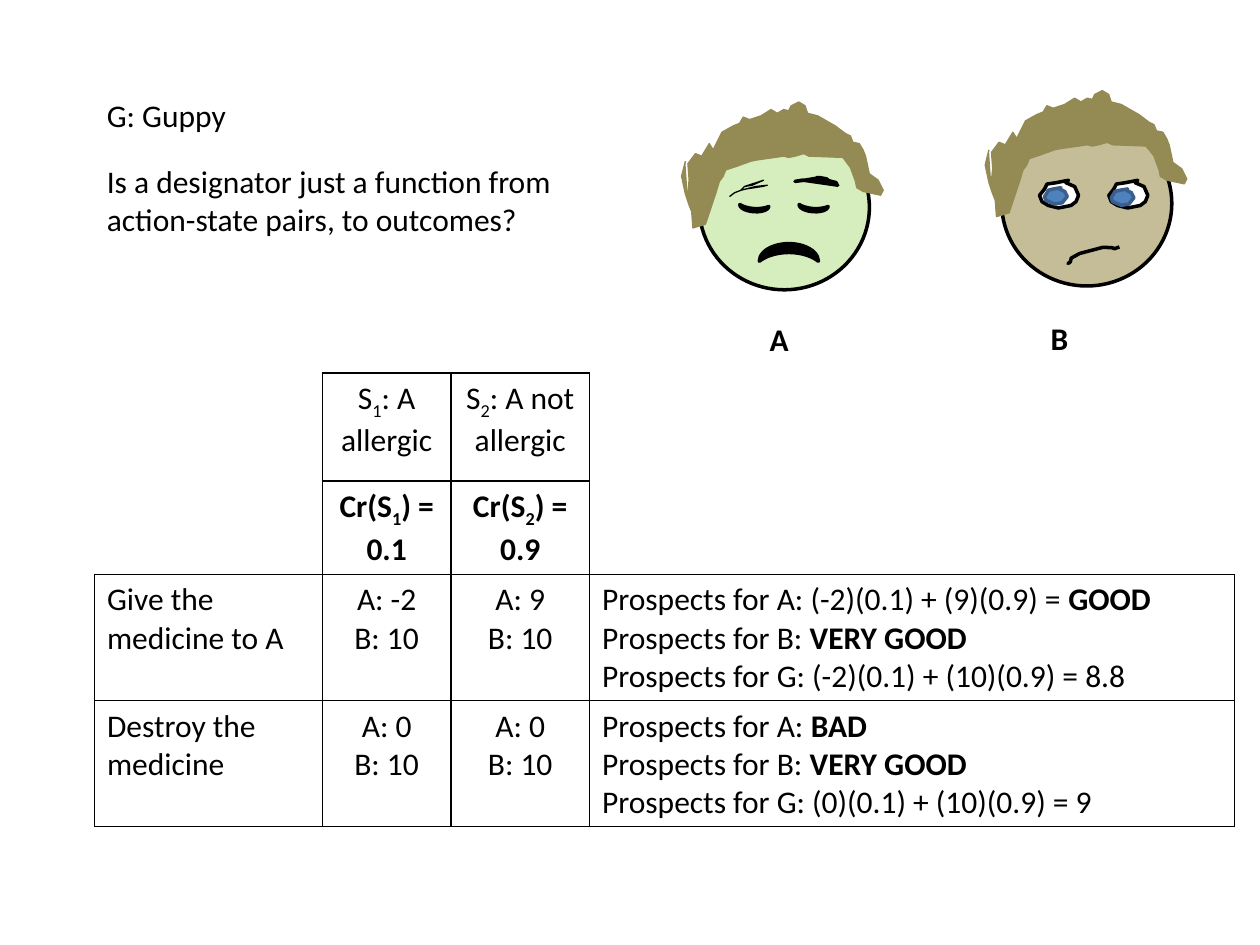
from dataclasses import dataclass

from lxml.etree import SubElement
from pptx import Presentation
from pptx.dml.color import RGBColor
from pptx.enum.shapes import MSO_SHAPE
from pptx.enum.text import MSO_AUTO_SIZE, PP_ALIGN
from pptx.oxml.ns import qn
from pptx.util import Pt


@dataclass(frozen=True)
class Theme:
    font: str = "Calibri"
    size: float = 18
    ink: str = "000000"
    white: str = "FFFFFF"
    pale_skin: str = "D6EDBD"
    tan_skin: str = "C4BD97"
    hair: str = "948A54"
    iris: str = "4F81BD"
    iris_rim: str = "3A5F8C"
    thin: float = 0.75
    border: float = 1
    thick: float = 2
    outline_unit: float = 0.72


HAIR = [
    (3, 48), (0, 60), (3, 74), (6, 83), (8, 88), (9, 101), (19, 98), (27, 74),
    (30, 64), (33, 60), (35, 55), (44, 52), (55, 48), (60, 47), (81, 44),
    (85, 45), (90, 44), (97, 42), (101, 44), (128, 45), (134, 53), (138, 64),
    (139, 69), (144, 72), (158, 75), (160, 71), (156, 63), (149, 58),
    (146, 44), (144, 39), (141, 34), (136, 33), (134, 28), (130, 26),
    (122, 20), (108, 12), (100, 10), (98, 4), (93, 1), (87, 4), (85, 8),
    (81, 7), (76, 10), (71, 7), (63, 12), (54, 15), (49, 13), (46, 18),
    (41, 20), (32, 25), (25, 39), (22, 34), (16, 44), (11, 42), (5, 50),
    (6, 63), (5, 72), (5, 77),
]
EYE = [(23, 0), (13, 2), (6, 3), (4, 7), (0, 12), (2, 17), (7, 20), (15, 22),
       (25, 20), (29, 17), (31, 12), (28, 5), (21, 2)]
IRIS = [(13, 0), (7, 1), (3, 2), (2, 4), (0, 7), (1, 10), (8, 13), (14, 12),
        (18, 7), (16, 3), (12, 1)]
FAINT_BROW = [(0, 13), (4, 10), (9, 8), (21, 5), (30, 4), (26, 5), (13, 7),
              (9, 8), (12, 5), (21, 2), (27, 0), (18, 4), (12, 5)]
BOLD_BROW = [(9, 4), (1, 5), (7, 4), (28, 7), (35, 8), (30, 6), (26, 3),
             (21, 2), (18, 2), (28, 5), (34, 6), (26, 4), (21, 2)]
SMIRK = [(40, -1), (42, -2), (40, -1), (39, 2), (32, 5), (13, 8), (6, 7),
         (4, 6), (0, 7)]


def plain(text):
    """Return a paragraph of one plain run."""
    return [(text, "")]


def ending_bold(text, strong):
    """Return a paragraph whose last run is bold."""
    return [(text, ""), (strong, "b")]


def indexed(before, index, after, style=""):
    """Return a paragraph with a subscript index."""
    return [(before, style), (index, style + "s"), (after, style)]


class Painter:
    """Holds the theme and the current slide and draws each kind of element."""

    def __init__(self, deck, theme):
        self.theme = theme
        self.page = deck.slides.add_slide(deck.slide_layouts[6])

    def add_runs(self, frame, paragraphs, align=PP_ALIGN.LEFT):
        """Fill a text frame run by run."""
        for number, runs in enumerate(paragraphs):
            para = frame.add_paragraph() if number else frame.paragraphs[0]
            para.alignment = align
            for text, style in runs:
                span = para.add_run()
                span.text = text
                span.font.name = self.theme.font
                span.font.size = Pt(self.theme.size)
                span.font.bold = "b" in style
                span.font.color.rgb = RGBColor.from_string(self.theme.ink)
                if "s" in style:
                    span.font._element.set("baseline", "-25000")

    def text(self, left, top, width, height, runs):
        """Add a wrapping text box."""
        box = self.page.shapes.add_textbox(Pt(left), Pt(top), Pt(width), Pt(height))
        box.text_frame.word_wrap = True
        box.text_frame.auto_size = MSO_AUTO_SIZE.SHAPE_TO_FIT_TEXT
        self.add_runs(box.text_frame, [runs])

    def finish(self, shape, fill, line, weight, turn):
        """Apply fill, line and rotation to a shape."""
        shape.shadow.inherit = False
        if fill:
            shape.fill.solid()
            shape.fill.fore_color.rgb = RGBColor.from_string(fill)
        else:
            shape.fill.background()
        shape.line.color.rgb = RGBColor.from_string(line)
        shape.line.width = Pt(weight)
        shape.rotation = turn

    def preset(self, kind, left, top, width, height, fill, turn=0):
        """Add a preset shape with a thick outline."""
        shape = self.page.shapes.add_shape(kind, Pt(left), Pt(top), Pt(width), Pt(height))
        self.finish(shape, fill, self.theme.ink, self.theme.thick, turn)

    def outline(self, points, left, top, fill, line, weight, closed=True, turn=0):
        """Add a freeform through points counted from its left top."""
        builder = self.page.shapes.build_freeform(*points[0], scale=Pt(self.theme.outline_unit))
        builder.add_line_segments(points[1:], close=closed)
        shape = builder.convert_to_shape(Pt(left), Pt(top))
        self.finish(shape, fill, line, weight, turn)

    def borders(self, cell, sides):
        """Rule the named sides of a cell and clear the others."""
        properties = cell._tc.get_or_add_tcPr()
        for place, side in enumerate("LRTB"):
            edge = properties.makeelement(qn(f"a:ln{side}"), {"w": str(Pt(self.theme.border))})
            properties.insert(place, edge)
            if side in sides:
                fill = SubElement(edge, qn("a:solidFill"))
                SubElement(fill, qn("a:srgbClr"), val=self.theme.ink)
            else:
                SubElement(edge, qn("a:noFill"))

    def table(self, left, top, widths, heights, rows, open_sides):
        """Add a ruled table with centred inner columns."""
        frame = self.page.shapes.add_table(len(rows), len(widths), Pt(left), Pt(top),
                                           Pt(sum(widths)), Pt(sum(heights)))
        table = frame.table
        table.first_row = table.horz_banding = False
        for column, width in zip(table.columns, widths):
            column.width = Pt(width)
        for r, (height, row) in enumerate(zip(heights, rows)):
            table.rows[r].height = Pt(height)
            for c, paragraphs in enumerate(row):
                cell = table.cell(r, c)
                cell.fill.background()
                inner = 0 < c < len(widths) - 1
                align = PP_ALIGN.CENTER if inner else PP_ALIGN.LEFT
                self.add_runs(cell.text_frame, paragraphs, align)
                self.borders(cell, open_sides.get((r, c), "LRTB"))


def draw_faces(painter):
    """Draw the ill patient and the healthy patient."""
    theme = painter.theme
    ink, thick = theme.ink, theme.thick
    painter.preset(MSO_SHAPE.OVAL, 572.4, 69.1, 97.2, 94.3, theme.tan_skin)
    for left in (633.6, 594):
        painter.outline(EYE, left, 103, theme.white, ink, thick)
    painter.preset(MSO_SHAPE.OVAL, 399.6, 71.3, 97.2, 94.3, theme.pale_skin)
    for left in (429.1, 463):
        painter.preset(MSO_SHAPE.MOON, left, 110.9, 3.6, 16.6, ink, 273.8)
    painter.preset(MSO_SHAPE.MOON, 445.7, 127.4, 10.1, 33.8, ink, 90)
    painter.outline(FAINT_BROW, 416.9, 103, None, ink, theme.thin, closed=False)
    painter.outline(BOLD_BROW, 453.6, 100.1, ink, ink, thick)
    for left, top in ((389.5, 57.6), (563, 51.1)):
        painter.outline(HAIR, left, top, theme.hair, theme.hair, theme.thin, closed=False)
    for left, top in ((596.9, 107.3), (635, 108)):
        painter.outline(IRIS, left, top, theme.iris, theme.iris_rim, thick)
    painter.outline(SMIRK, 609.8, 143.3, None, ink, thick, closed=False, turn=174.2)


def main():
    """Build the deck and save it."""
    deck = Presentation()
    deck.slide_width, deck.slide_height = Pt(720), Pt(540)
    painter = Painter(deck, Theme())
    draw_faces(painter)
    painter.text(432.7, 179.3, 40.3, 28.8, [("A", "b")])
    painter.text(593.3, 178.6, 40.3, 28.8, [("B", "b")])
    painter.text(54, 51.1, 278.6, 28.8, plain("G: Guppy"))
    painter.text(54, 89.3, 278.6, 51.1,
                 plain("Is a designator just a function from action-state pairs, to outcomes?"))
    very_good = ending_bold("Prospects for B: ", "VERY GOOD")
    rows = [
        [[], [indexed("S", "1", ": A allergic")], [indexed("S", "2", ": A not allergic")], []],
        [[], [indexed("Cr(S", "1", ") = 0.1", "b")], [indexed("Cr(S", "2", ") = 0.9", "b")], []],
        [[plain("Give the medicine to A")],
         [plain("A: -2"), plain("B: 10")], [plain("A: 9"), plain("B: 10")],
         [ending_bold("Prospects for A: (-2)(0.1) + (9)(0.9) = ", "GOOD"), very_good,
          plain("Prospects for G: (-2)(0.1) + (10)(0.9) = 8.8")]],
        [[plain("Destroy the medicine")],
         [plain("A: 0"), plain("B: 10")], [plain("A: 0"), plain("B: 10")],
         [ending_bold("Prospects for A: ", "BAD"), very_good,
          plain("Prospects for G: (0)(0.1) + (10)(0.9) = 9")]],
    ]
    open_sides = {(0, 0): "R", (0, 3): "L", (1, 0): "RB", (1, 3): "LB"}
    painter.table(54, 213.1, [130.3, 73.4, 79.2, 368.6], [61.9, 34.6, 68.4, 68.4],
                  rows, open_sides)
    deck.save("out.pptx")


if __name__ == "__main__":
    main()
